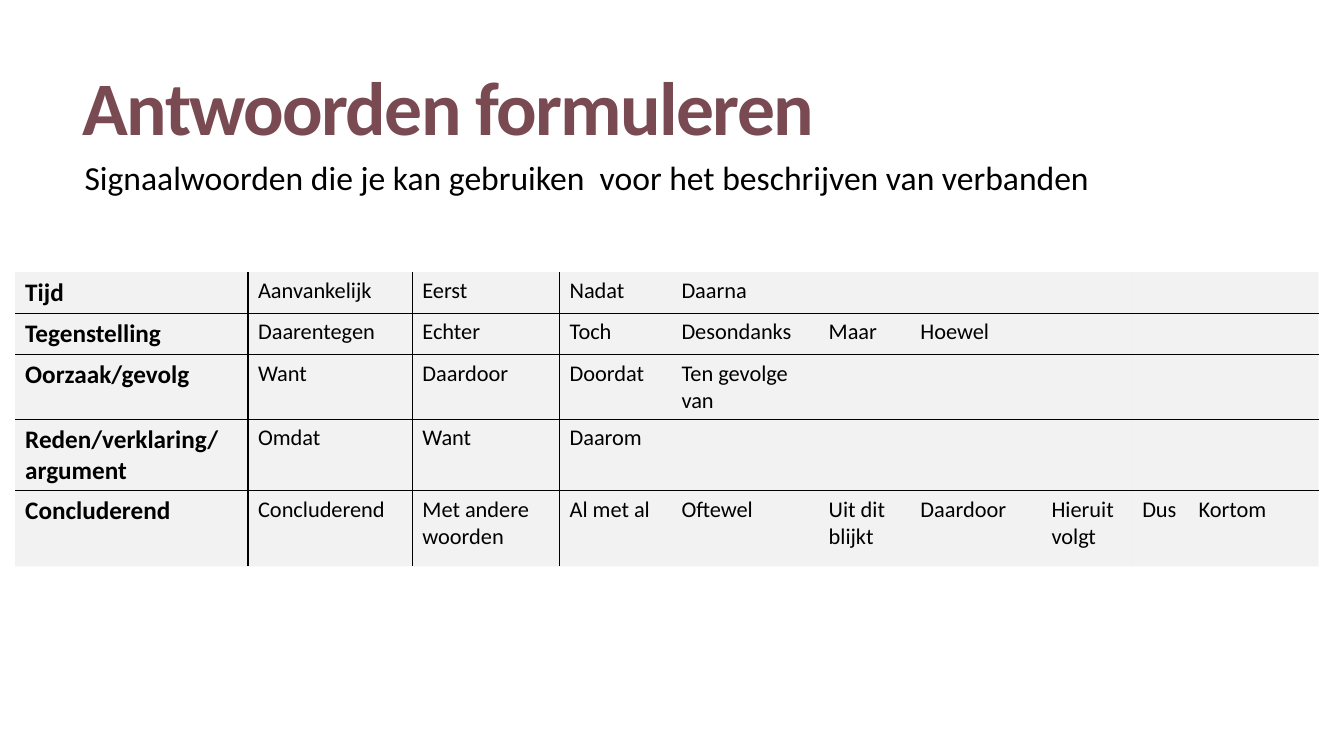
from pptx import Presentation
from pptx.dml.color import RGBColor as RGB
from pptx.enum.text import MSO_ANCHOR as Anchor, MSO_AUTO_SIZE as Fit, PP_ALIGN as Align
from pptx.oxml.ns import qn
from pptx.util import Pt
from lxml.etree import SubElement as Sub

PX = 9144
FONT = "Calibri"
BLACK = RGB(0, 0, 0)
PLUM = RGB(0x79, 0x4A, 0x51)
PLAIN = "{2D5ABB26-0587-4C30-8999-92F81FD0307C}"

COLS = [231, 163, 146, 111, 146, 91, 130, 90, 56, 129]
ROWS = [
    (41, ["Tijd", "Aanvankelijk", "Eerst", "Nadat", "Daarna"]),
    (41, ["Tegenstelling", "Daarentegen", "Echter", "Toch", "Desondanks", "Maar", "Hoewel"]),
    (64, ["Oorzaak/gevolg", "Want", "Daardoor", "Doordat", "Ten gevolge van"]),
    (71, ["Reden/verklaring/\nargument", "Omdat", "Want", "Daarom"]),
    (75, ["Concluderend", "Concluderend", "Met andere woorden", "Al met al", "Oftewel",
          "Uit dit blijkt", "Daardoor", "Hieruit volgt", "Dus", "Kortom"]),
]


def px(*nums):
    """Turn px lengths into EMU."""
    return [num * PX for num in nums]


def write(frame, text, size, color=BLACK, bold=False):
    """Add text to the first paragraph, one run per line."""
    para = frame.paragraphs[0]
    para.alignment = Align.LEFT
    for num, line in enumerate(text.split("\n")):
        if num:
            para.add_line_break()
        run = para.add_run()
        run.text = line
        font = run.font
        font.name, font.size, font.bold = FONT, Pt(size), bold
        font.color.rgb = color
    return para


def add_title(slide, text, box):
    """Place and format the title."""
    title = slide.shapes.title
    title.left, title.top, title.width, title.height = px(*box)
    frame = title.text_frame
    frame.word_wrap, frame.auto_size = True, Fit.NONE
    frame.vertical_anchor = Anchor.MIDDLE
    para = write(frame, text, 54, PLUM, True)
    para.line_spacing = 0.85
    para.runs[0].font._element.set("spc", "-120")


def add_text(slide, text, box):
    """Add a wrapped line of text."""
    frame = slide.shapes.add_textbox(*px(*box)).text_frame
    frame.word_wrap = True
    write(frame, text, 24).line_spacing = 0.85


def add_edge(props, side):
    """Draw one thin black border of a cell."""
    line = Sub(props, qn("a:" + side), w=str(Pt(1)))
    fill = Sub(line, qn("a:solidFill"))
    Sub(fill, qn("a:srgbClr"), val=str(BLACK))


def style(cell, row, col):
    """Give a cell its inner borders and pale tint."""
    props = cell._tc.get_or_add_tcPr()
    edges = [("lnL", col in (1, 2)), ("lnR", col in (0, 1)),
             ("lnT", row > 0), ("lnB", row < len(ROWS) - 1)]
    for side, shown in edges:
        if shown:
            add_edge(props, side)
    cell.fill.solid()
    cell.fill.fore_color.rgb = BLACK
    tint = props.find(qn("a:solidFill")).find(qn("a:srgbClr"))
    Sub(tint, qn("a:alpha"), val="5000")


def add_grid(slide, left, top):
    """Add the table of signal words."""
    high = sum(size for size, _ in ROWS)
    frame = slide.shapes.add_table(len(ROWS), len(COLS), *px(left, top, sum(COLS), high))
    table = frame.table
    table.first_row = table.horz_banding = False
    table._tbl.tblPr.find(qn("a:tableStyleId")).text = PLAIN
    for col, wide in zip(table.columns, COLS):
        col.width = wide * PX
    for row, (size, words) in enumerate(ROWS):
        table.rows[row].height = size * PX
        for col in range(len(COLS)):
            cell = table.cell(row, col)
            style(cell, row, col)
            if col < len(words):
                write(cell.text_frame, words[col], 16 if col else 18, bold=col == 0)


def main():
    """Build and save the slide."""
    deck = Presentation()
    deck.slide_width, deck.slide_height = px(1333, 750)
    slide = deck.slides.add_slide(deck.slide_layouts[5])
    add_title(slide, "Antwoorden formuleren", (72, 55, 1178, 113))
    add_text(slide, "Signaalwoorden die je kan gebruiken  voor het beschrijven van verbanden",
             (74, 157, 1176, 50))
    add_grid(slide, 15, 270)
    deck.save("out.pptx")


if __name__ == "__main__":
    main()
